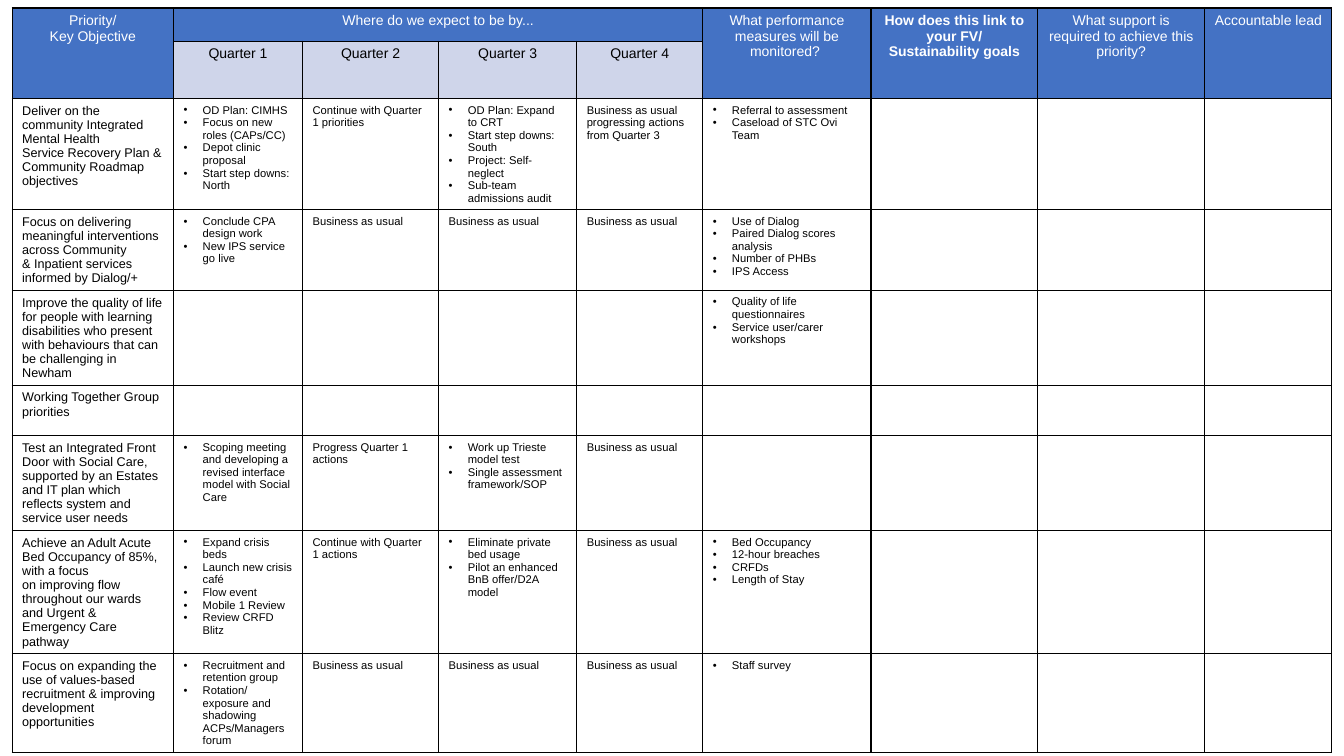
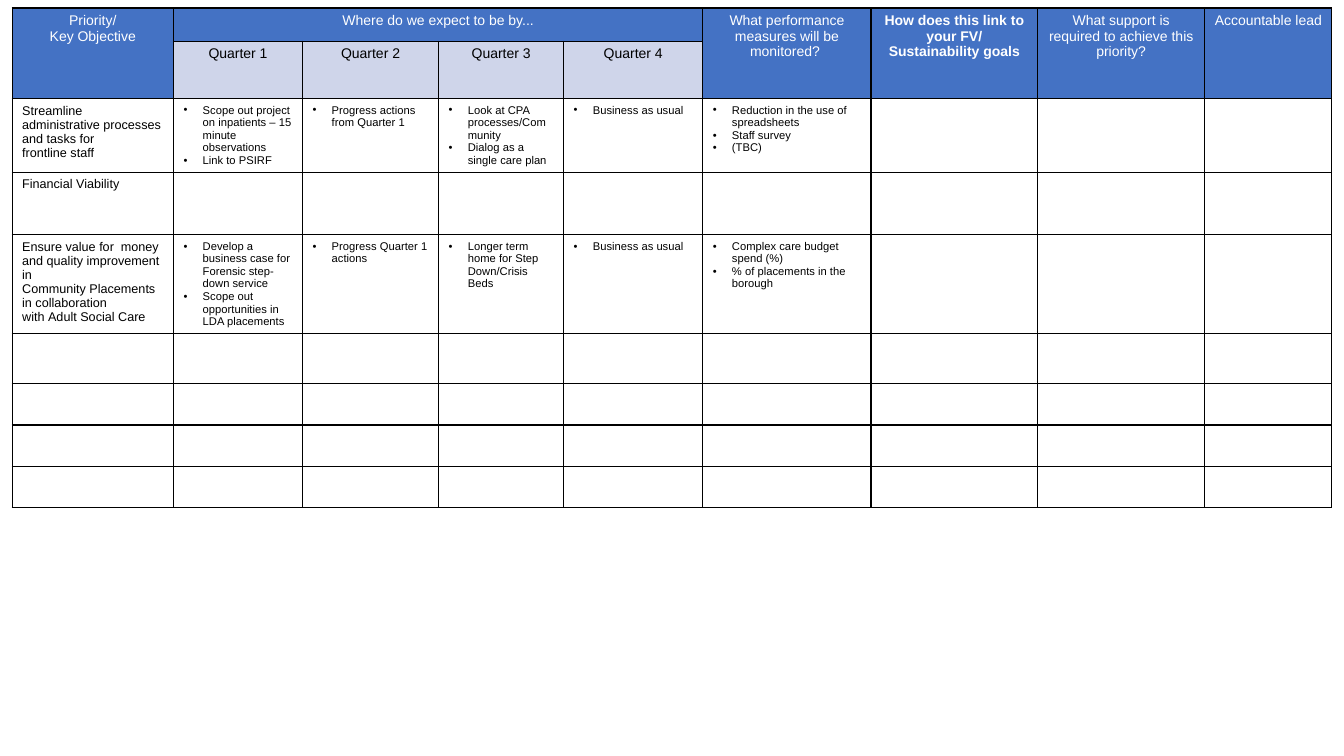
from lxml.etree import SubElement
from pptx import Presentation
from pptx.dml.color import RGBColor
from pptx.enum.text import PP_ALIGN
from pptx.oxml.ns import qn
from pptx.util import Inches, Pt

# Shared colours and text formats
BLUE = RGBColor(0x44, 0x72, 0xC4)
LILAC = RGBColor(0xCF, 0xD5, 0xEA)
WHITE = RGBColor(0xFF, 0xFF, 0xFF)
BLACK = RGBColor(0x00, 0x00, 0x00)
HEADER_FORMAT = {"name": "Arial", "size": Pt(10), "bold": False}
KEY_HEADER_FORMAT = {**HEADER_FORMAT, "bold": True}
OBJECTIVE_FORMAT = {"name": "Arial", "size": Pt(9), "bold": False}
DETAIL_FORMAT = {**OBJECTIVE_FORMAT, "size": Pt(8)}

# A tilde in the texts below marks a non-breaking space
HARD_SPACE = chr(160)

# Shared header: first column -> text; these span both header rows
TALL_HEADERS = {
    0: "Priority/\nKey Objective",
    5: "What performance measures will be monitored?~",
    6: "How does this~link to your~FV/\nSustainability~goals",
    7: "What support is required to achieve this priority?",
    8: "Accountable lead",
}
KEY_HEADER_COLUMN = 6
QUARTERS_HEADER = "Where do we expect to be by..."
QUARTER_COLUMNS = range(1, 5)
HEADER_HEIGHTS = [0.33, 0.57]
USUAL = "Business as usual"

# Each row: objective, quarters 1 to 4, measures; a list is bulleted
SLIDES = [
    {
        "columns": [1.6, 1.28, 1.35, 1.37, 1.25, 1.67, 1.65, 1.66, 1.26],
        "heights": [1.1, 0.8, 0.94, 0.5, 0.94, 1.22, 0.97],
        "rows": [
            [
                "Deliver on the community~Integrated Mental Health "
                "Service~Recovery Plan & Community~Roadmap objectives",
                ["OD Plan: CIMHS", "Focus on new roles (CAPs/CC)",
                 "Depot clinic proposal", "Start step downs: North"],
                "Continue with Quarter 1 priorities",
                ["OD Plan: Expand to CRT", "Start step downs: South",
                 "Project: Self-neglect", "Sub-team admissions audit"],
                "Business as usual progressing actions from Quarter 3",
                ["Referral to assessment~", "Caseload of STC Ovi Team"],
            ],
            [
                "Focus on delivering meaningful~interventions across Community "
                "&~Inpatient services informed by~Dialog/+",
                ["Conclude CPA design work", "New IPS service go live"],
                USUAL, USUAL, USUAL,
                ["Use of Dialog", "Paired Dialog scores analysis",
                 "Number of PHBs", "IPS Access"],
            ],
            [
                "Improve the quality of life for~people with learning "
                "disabilities~who present with~behaviours~that~can be "
                "challenging in Newham",
                "", "", "", "",
                ["Quality of life questionnaires",
                 "Service user/carer workshops"],
            ],
            ["Working Together Group priorities"],
            [
                "Test an Integrated Front Door with~Social Care, supported by "
                "an~Estates and IT plan which reflects~system and service "
                "user needs",
                ["Scoping meeting and developing a revised interface model "
                 "with Social Care"],
                "Progress Quarter 1 actions",
                ["Work up Trieste model test",
                 "Single assessment framework/SOP"],
                USUAL,
            ],
            [
                "Achieve an Adult Acute Bed~Occupancy of 85%, with a focus "
                "on~improving flow throughout our~wards and Urgent & "
                "Emergency~Care pathway",
                ["Expand crisis beds", "Launch new crisis café", "Flow event",
                 "Mobile 1 Review", "Review CRFD Blitz"],
                "Continue with Quarter 1 actions",
                ["Eliminate private bed usage",
                 "Pilot an enhanced BnB offer/D2A model"],
                USUAL,
                ["Bed Occupancy", "12-hour breaches", "CRFDs",
                 "Length of Stay"],
            ],
            [
                "Focus on expanding the use of~values-based recruitment "
                "&~improving development~\nopportunities",
                ["Recruitment and retention group",
                 "Rotation/exposure and shadowing ACPs/Managers forum"],
                USUAL, USUAL, USUAL,
                ["Staff survey"],
            ],
        ],
    },
    {
        "columns": [1.6, 1.28, 1.35, 1.24, 1.38, 1.67, 1.65, 1.66, 1.26],
        "heights": [0.73, 0.62, 0.97, 0.5, 0.41, 0.41, 0.41],
        "rows": [
            [
                "Streamline administrative~processes and tasks for "
                "frontline~staff",
                ["Scope out project on inpatients – 15 minute observations",
                 "Link to PSIRF"],
                ["Progress actions from Quarter 1"],
                ["Look at CPA processes/Community",
                 "Dialog as a single care plan"],
                [USUAL],
                ["Reduction in the use of spreadsheets", "Staff survey",
                 "(TBC)"],
            ],
            ["Financial Viability"],
            [
                "Ensure value for~ money and~quality improvement in "
                "Community~Placements in collaboration with~Adult Social Care",
                ["Develop a business case for Forensic step-down service",
                 "Scope out opportunities in LDA placements"],
                ["Progress Quarter 1 actions"],
                ["Longer term home for Step Down/Crisis Beds"],
                [USUAL],
                ["Complex care budget spend (%)",
                 "% of placements in the borough"],
            ],
        ],
    },
]


def write_cell(cell, content, text_format, color=BLACK, alignment=None):
    """Write a string as plain paragraphs, or a list as bullets."""
    bulleted = isinstance(content, list)
    text = "\n".join(content) if bulleted else content
    cell.text_frame.text = text.replace("~", HARD_SPACE)
    if alignment == PP_ALIGN.CENTER:
        cell.margin_left = cell.margin_right = Inches(0.08)
    for paragraph in cell.text_frame.paragraphs:
        paragraph.alignment = alignment
        if bulleted:
            properties = paragraph._p.get_or_add_pPr()
            properties.set("marL", str(Inches(0.19)))
            properties.set("indent", str(-Inches(0.19)))
            SubElement(properties, qn("a:buFont"), typeface="Arial")
            SubElement(properties, qn("a:buChar"), char="•")
        for run in paragraph.runs:
            for attribute, value in text_format.items():
                setattr(run.font, attribute, value)
            run.font.color.rgb = color


def style_cell(cell, fill_color):
    """Give a cell thin black borders and a fill, or none."""
    properties = cell._tc.get_or_add_tcPr()
    for side in ("lnL", "lnR", "lnT", "lnB"):
        line = SubElement(properties, qn(f"a:{side}"), w=str(Pt(1)))
        solid = SubElement(line, qn("a:solidFill"))
        SubElement(solid, qn("a:srgbClr"), val=str(BLACK))
    if fill_color is None:
        cell.fill.background()
    else:
        cell.fill.solid()
        cell.fill.fore_color.rgb = fill_color


presentation = Presentation()
presentation.slide_width = Inches(13.33)
presentation.slide_height = Inches(7.5)

for content in SLIDES:
    slide = presentation.slides.add_slide(presentation.slide_layouts[6])

    # Table grid
    widths = content["columns"]
    heights = HEADER_HEIGHTS + content["heights"]
    table = slide.shapes.add_table(
        len(heights), len(widths), Inches(0.12), Inches(0.08),
        Inches(sum(widths)), Inches(sum(heights))).table
    table.first_row = False
    table.horz_banding = False
    for column, width in zip(table.columns, widths):
        column.width = Inches(width)
    for row, height in zip(table.rows, heights):
        row.height = Inches(height)

    # Borders and fills
    for row_index, row in enumerate(table.rows):
        for column_index, cell in enumerate(row.cells):
            if row_index >= len(HEADER_HEIGHTS):
                fill_color = None
            elif row_index == 1 and column_index in QUARTER_COLUMNS:
                fill_color = LILAC
            else:
                fill_color = BLUE
            style_cell(cell, fill_color)

    # Header
    for column_index, text in TALL_HEADERS.items():
        cell = table.cell(0, column_index)
        cell.merge(table.cell(1, column_index))
        is_key = column_index == KEY_HEADER_COLUMN
        header_format = KEY_HEADER_FORMAT if is_key else HEADER_FORMAT
        write_cell(cell, text, header_format, WHITE, PP_ALIGN.CENTER)
    quarters_cell = table.cell(0, QUARTER_COLUMNS[0])
    quarters_cell.merge(table.cell(0, QUARTER_COLUMNS[-1]))
    write_cell(quarters_cell, QUARTERS_HEADER, HEADER_FORMAT, WHITE,
               PP_ALIGN.CENTER)
    for quarter in QUARTER_COLUMNS:
        write_cell(table.cell(1, quarter), f"Quarter {quarter}",
                   HEADER_FORMAT, BLACK, PP_ALIGN.CENTER)

    # Objectives and their details
    for row_index, row in enumerate(content["rows"], len(HEADER_HEIGHTS)):
        for column_index, text in enumerate(row):
            text_format = DETAIL_FORMAT if column_index else OBJECTIVE_FORMAT
            write_cell(table.cell(row_index, column_index), text, text_format)

presentation.save("out.pptx")
